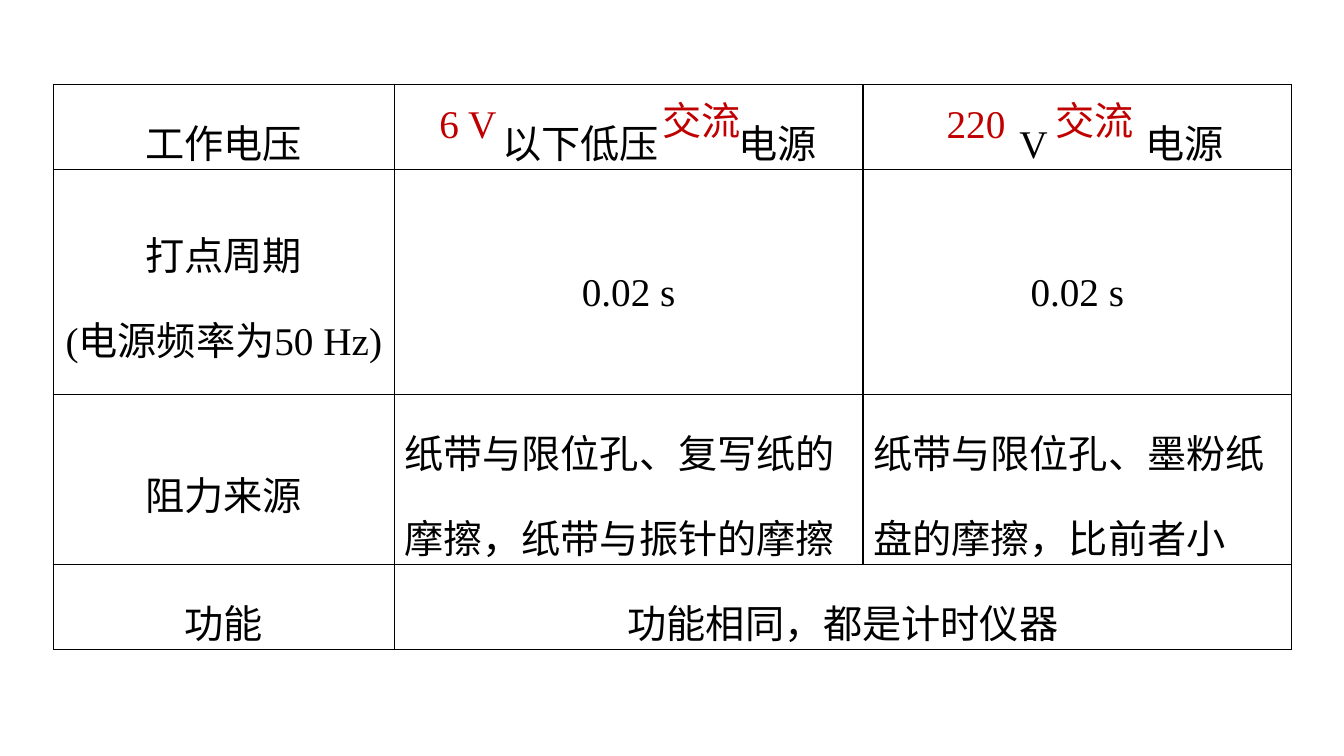
from pptx import Presentation
from pptx.dml.color import RGBColor
from pptx.enum.text import MSO_ANCHOR as Anchor, MSO_AUTO_SIZE as AutoSize, PP_ALIGN as Align
from pptx.oxml import parse_xml
from pptx.oxml.ns import nsdecls
from pptx.util import Inches, Pt

BLACK, RED = "000000", "C00000"
COLUMNS = [3.38, 4.65, 4.25]
ROWS = [0.74, 2.23, 1.48, 0.74]
TABLE_LEFT, TABLE_TOP = 0.53, 0.84
BLANK = ("\t", True)

CONTENT = [
    [["工作电压"], None, None],
    [["打点周期", "(电源频率为50 Hz)"], ["0.02 s"], ["0.02 s"]],
    [["阻力来源"], ["纸带与限位孔、复写纸的摩擦，纸带与振针的摩擦"],
     ["纸带与限位孔、墨粉纸盘的摩擦，比前者小"]],
    [["功能"], ["功能相同，都是计时仪器"], None],
]
VOLTAGES = {
    1: ([("\t", False), BLANK, ("以下低压", False), BLANK, ("电源", False)],
        [0.45, 1.05, 3.39]),
    2: ([("\t", False), BLANK, (" V", False), BLANK, ("\t电源", False)],
        [0.67, 1.44, 2.68, 2.78]),
}
ANSWERS = [
    ("6 V", 4.26, 0.94, 0.77),
    ("交流", 6.47, 0.91, 0.99),
    ("220", 9.29, 0.94, 0.79),
    ("交流", 10.37, 0.91, 0.99),
]


def rgb(color):
    return RGBColor.from_string(color)


def apply(target, values):
    for name, value in values.items():
        setattr(target, name, value)


def add_words(paragraph, words, color=BLACK, underline=False):
    run = paragraph.add_run()
    run.text = words
    apply(run.font, {"size": Pt(28), "name": "Times New Roman", "underline": underline})
    run.font.color.rgb = rgb(color)


def add_tab_stops(paragraph, stops):
    tabs = "".join(f'<a:tab pos="{Inches(stop)}" algn="l"/>' for stop in stops)
    properties = paragraph._p.get_or_add_pPr()
    properties.append(parse_xml(f'<a:tabLst {nsdecls("a")}>{tabs}</a:tabLst>'))


def format_cell(cell):
    apply(cell, {"margin_left": Inches(0.02), "margin_right": Inches(0.02),
                 "margin_top": 0, "margin_bottom": 0,
                 "vertical_anchor": Anchor.MIDDLE})
    cell.fill.background()
    properties = cell._tc.get_or_add_tcPr()
    for position, side in enumerate("LRTB"):
        properties.insert(position, parse_xml(
            f'<a:ln{side} {nsdecls("a")} w="{Pt(1)}"><a:solidFill>'
            f'<a:srgbClr val="{BLACK}"/></a:solidFill></a:ln{side}>'))


def fill_lines(cell, lines, centred):
    frame = cell.text_frame
    for number, line in enumerate(lines):
        paragraph = frame.add_paragraph() if number else frame.paragraphs[0]
        apply(paragraph, {"alignment": Align.CENTER if centred else Align.LEFT,
                          "line_spacing": 1.5})
        if not centred:
            paragraph._p.get_or_add_pPr().set("marL", str(Inches(0.08)))
        add_words(paragraph, line)


def fill_voltage(cell, pieces, stops):
    paragraph = cell.text_frame.paragraphs[0]
    apply(paragraph, {"alignment": Align.LEFT, "line_spacing": 1.5})
    add_tab_stops(paragraph, stops)
    for words, underline in pieces:
        add_words(paragraph, words, underline=underline)


def add_comparison(slide):
    table = slide.shapes.add_table(
        len(ROWS), len(COLUMNS), Inches(TABLE_LEFT), Inches(TABLE_TOP),
        Inches(sum(COLUMNS)), Inches(sum(ROWS))).table
    apply(table, {"first_row": False, "horz_banding": False})
    for column, width in zip(table.columns, COLUMNS):
        column.width = Inches(width)
    for row, height in zip(table.rows, ROWS):
        row.height = Inches(height)
    table.cell(3, 1).merge(table.cell(3, 2))
    for r, row_content in enumerate(CONTENT):
        for c, lines in enumerate(row_content):
            cell = table.cell(r, c)
            format_cell(cell)
            if lines:
                fill_lines(cell, lines, centred=r != 2 or c == 0)
    for c, (pieces, stops) in VOLTAGES.items():
        fill_voltage(table.cell(0, c), pieces, stops)


def add_answer(slide, words, left, top, width):
    answer = slide.shapes.add_textbox(Inches(left), Inches(top), Inches(width), Inches(0.57))
    apply(answer.text_frame, {"word_wrap": False, "auto_size": AutoSize.SHAPE_TO_FIT_TEXT})
    add_words(answer.text_frame.paragraphs[0], words, RED)


def main():
    deck = Presentation()
    apply(deck, {"slide_width": Inches(13.33), "slide_height": Inches(7.5)})
    slide = deck.slides.add_slide(deck.slide_layouts[6])
    add_comparison(slide)
    for answer in ANSWERS:
        add_answer(slide, *answer)
    deck.save("out.pptx")


if __name__ == "__main__":
    main()
